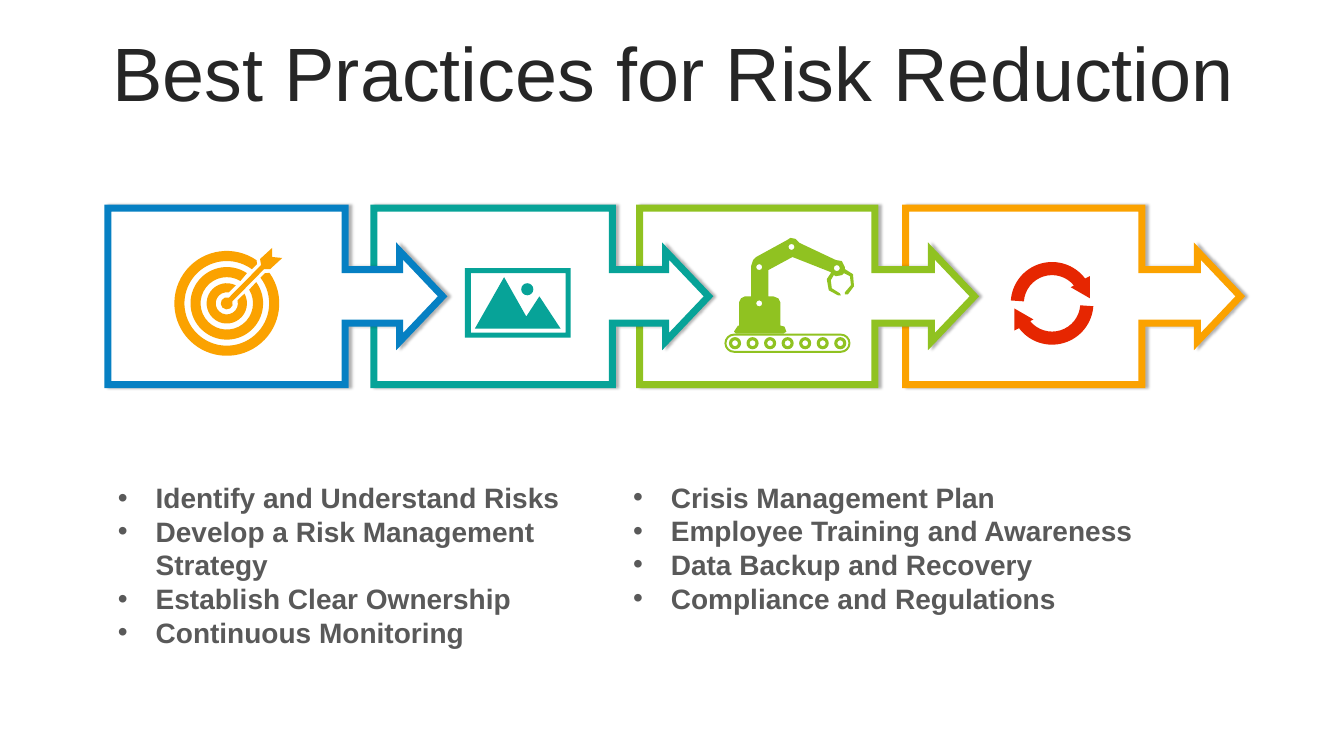
from dataclasses import dataclass
from math import ceil, cos, radians, sin, tan

from lxml.etree import SubElement
from pptx import Presentation
from pptx.dml.color import RGBColor
from pptx.enum.shapes import MSO_SHAPE
from pptx.enum.text import MSO_ANCHOR, MSO_AUTO_SIZE, PP_ALIGN
from pptx.oxml.ns import qn
from pptx.util import Inches, Pt


@dataclass(frozen=True)
class Theme:
    font: str = "Arial"
    title: str = "262626"
    body: str = "595959"
    white: str = "FFFFFF"
    blue: str = "0680C3"
    teal: str = "07A398"
    green: str = "90C221"
    orange: str = "FBA200"
    red: str = "E62601"
    title_size: int = 54
    body_size: int = 20


@dataclass(frozen=True)
class Box:
    x: int
    y: int
    w: int
    h: int
    cols: float
    rows: float

    def point(self, col, row):
        return (round(self.x + self.w * col / self.cols),
                round(self.y + self.h * row / self.rows))

    def area(self, col, row, cols, rows):
        return (*self.point(col, row),
                round(self.w * cols / self.cols), round(self.h * rows / self.rows))

    def sub(self, col, row, cols, rows):
        return Box(*self.area(col, row, cols, rows), cols, rows)


T = Theme()
STEPS = [(T.blue, 0.709), (T.teal, 0.713), (T.green, 0.703), (T.orange, 0.706)]
LEFT_POINTS = ["Identify and Understand Risks", "Develop a Risk Management Strategy",
               "Establish Clear Ownership", "Continuous Monitoring"]
RIGHT_POINTS = ["Crisis Management Plan", "Employee Training and Awareness",
                "Data Backup and Recovery", "Compliance and Regulations"]
ROBOT = [(66, 0), (71, 1), (75, 5), (111, 22), (117, 23), (120, 29), (120, 31),
         (128, 36), (129, 48), (123, 56), (120, 56), (120, 54), (126, 47),
         (125, 38), (119, 35), (117, 37), (111, 38), (109, 37), (106, 42),
         (107, 50), (115, 55), (116, 57), (113, 57), (104, 52), (102, 41),
         (106, 35), (106, 34), (68, 19), (44, 32), (44, 58), (49, 58),
         (54, 60), (56, 64), (56, 87), (60, 88), (62, 93), (59, 95),
         (12, 95), (10, 93), (14, 87), (15, 87), (15, 64), (17, 60),
         (21, 58), (27, 58), (27, 28), (29, 22), (32, 19), (63, 2)]


def paint(sp, color):
    sp.shadow.inherit = False
    sp.fill.solid()
    sp.fill.fore_color.rgb = RGBColor.from_string(color)
    sp.line.fill.background()


def arc(cx, cy, radius, start, end):
    count = ceil(abs(end - start) / 90)
    step = radians(end - start) / count
    pull = 4 / 3 * tan(step / 4)

    def on(angle, lean):
        return (cx + radius * (cos(angle) - lean * sin(angle)),
                cy + radius * (sin(angle) + lean * cos(angle)))

    angles = [radians(start) + step * i for i in range(count)]
    curves = [[on(a, pull), on(a + step, -pull), on(a + step, 0)] for a in angles]
    return [on(radians(start), 0)] + curves


def circle(cx, cy, radius):
    return arc(cx, cy, radius, 0, 360)


def rectangle(left, top, right, bottom):
    return [(left, top), (right, top), (right, bottom), (left, bottom)]


def stadium(left, right, cy, radius):
    return arc(right, cy, radius, -90, 90) + arc(left, cy, radius, 90, 270)


def icon_shape(shapes, box, contours, color):
    builder = shapes.build_freeform(*box.point(*contours[0][0]), scale=1.0)
    curve_flags = []
    for i, (first, *segments) in enumerate(contours):
        if i:
            builder.move_to(*box.point(*first))
        steps = [seg if isinstance(seg, list) else [seg] for seg in segments]
        curve_flags += [len(step) == 3 for step in steps]
        builder.add_line_segments([box.point(*pt) for step in steps for pt in step], close=True)
    sp = builder.convert_to_shape()
    paint(sp, color)
    lines = sp._element.iter(qn("a:lnTo"))
    for line, curved in zip(curve_nodes(list(lines), curve_flags), curve_flags):
        if curved:
            bend(line)


def curve_nodes(lines, curve_flags):
    nodes = iter(lines)
    return [[next(nodes) for _ in range(3 if curved else 1)] for curved in curve_flags]


def bend(nodes):
    parent = nodes[0].getparent()
    curve = SubElement(parent, qn("a:cubicBezTo"))
    parent.replace(nodes[0], curve)
    curve.append(nodes[0][0])
    for node in nodes[1:]:
        curve.append(node[0])
        parent.remove(node)


def style(p, size, color, bold=False):
    values = {"name": T.font, "size": Pt(size), "bold": bold}
    for r in p.runs:
        for name, value in values.items():
            setattr(r.font, name, value)
        r.font.color.rgb = RGBColor.from_string(color)


def place_title(s, box, text):
    sp = s.shapes.title
    for name, value in zip(("left", "top", "width", "height"), box.area(0, 0, box.cols, box.rows)):
        setattr(sp, name, value)
    tf = sp.text_frame
    tf.text = text
    tf.vertical_anchor = MSO_ANCHOR.MIDDLE
    p = tf.paragraphs[0]
    for name, value in {"alignment": PP_ALIGN.CENTER, "line_spacing": 0.9}.items():
        setattr(p, name, value)
    style(p, T.title_size, T.title)


def bullet_list(s, box, lines):
    tf = s.shapes.add_textbox(*box.area(0, 0, box.cols, box.rows)).text_frame
    for name, value in {"word_wrap": True, "auto_size": MSO_AUTO_SIZE.SHAPE_TO_FIT_TEXT}.items():
        setattr(tf, name, value)
    for i, line in enumerate(lines):
        p = tf.add_paragraph() if i else tf.paragraphs[0]
        p.text = line
        style(p, T.body_size, T.body, bold=True)
        props = p._p.get_or_add_pPr()
        props.set("marL", str(Pt(27)))
        props.set("indent", str(-Pt(27)))
        SubElement(props, qn("a:buFont"), typeface=T.font)
        SubElement(props, qn("a:buChar"), char="•")


def process_chain(s, box):
    shapes = s.shapes.add_group_shape().shapes
    for i, (color, body) in reversed(list(enumerate(STEPS))):
        sp = shapes.add_shape(MSO_SHAPE.RIGHT_ARROW_CALLOUT,
                              *box.area(263.7 * i, 0, 332, box.rows))
        for k, value in enumerate((0.303, 0.256, 0.243, body)):
            sp.adjustments[k] = value
        paint(sp, T.white)
        sp.line.color.rgb = RGBColor.from_string(color)
        sp.line.width = Pt(5)
        SubElement(sp.line._get_or_add_ln(), qn("a:miter"), lim="800000")
        effects = sp._element.spPr.find(qn("a:effectLst"))
        shadow = SubElement(effects, qn("a:outerShdw"), blurRad=str(Pt(2)),
                            dist=str(Pt(2)), dir="0", algn="l", rotWithShape="0")
        black = SubElement(shadow, qn("a:srgbClr"), val="000000")
        SubElement(black, qn("a:alpha"), val="30000")


def target_icon(s, box):
    def ring(outer, start, end, notch, inner, back, stop):
        return arc(51, 55, outer, start, end) + notch + arc(51, 55, inner, back, stop)

    icon_shape(s.shapes, box, [
        ring(20, -29, 296.6, [], 11, 280.3, -15.3),
        ring(36, -35.9, 303.7, [], 26, 301.3, -31.3),
        ring(52, -35.5, 304.6, [(81, 16)], 42, 306.3, -37.4) + [(89, 25)],
        [(96, 0), (96, 9), (106, 10), (94, 21), (88, 21)]
        + arc(51, 55, 6, -20, 290) + [(85, 17), (84, 11)],
    ], T.orange)


def landscape_icon(s, box):
    icon_shape(s.shapes, box, [
        circle(62, 21, 6),
        [(39, 9), (61, 48), (74, 28), (95, 60), (10, 60)],
        rectangle(6, 5, 100, 64),
        rectangle(0, 0, box.cols, box.rows),
    ], T.teal)


def robot_icon(s, box):
    shapes = s.shapes.add_group_shape().shapes
    joints = [circle(*pt, 3) for pt in ((35, 65), (112, 30), (35, 29), (67, 9))]
    icon_shape(shapes, box, joints + [ROBOT], T.green)
    wheels = [circle(11 + 17.4 * i, 104.5, radius) for i in range(7) for radius in (3, 6)]
    belt = [stadium(10, 116, 104.5, radius) for radius in (7.5, 9.5)]
    icon_shape(shapes, box, wheels + belt, T.green)


def cycle_icon(s, box):
    upper = (arc(40.5, 41, 41, 184, 323) + [(78, 14), (78, 36), (59, 25)]
             + arc(40.5, 41, 28, 321, 184))
    lower = (arc(40.5, 41, 41, 4, 143) + [(3, 68), (3, 46), (22, 57)]
             + arc(40.5, 41, 28, 141, 4))
    icon_shape(s.shapes, box, [lower, upper], T.red)


def practices_slide(prs):
    s = prs.slides.add_slide(prs.slide_layouts[5])
    page = Box(0, 0, prs.slide_width, prs.slide_height, 1333, 750)
    place_title(s, page.sub(35, 37, 1266, 79), "Best Practices for Risk Reduction")
    bullet_list(s, page.sub(107, 472, 528, 178), LEFT_POINTS)
    process_chain(s, page.sub(107, 206.5, 1123, 175))
    robot_icon(s, page.sub(718, 236, 129, 115))
    bullet_list(s, page.sub(618, 471.5, 528, 145), RIGHT_POINTS)
    cycle_icon(s, page.sub(1003, 260, 81, 82))
    landscape_icon(s, page.sub(461, 266, 105, 69))
    target_icon(s, page.sub(174, 246, 106, 107))


def main():
    prs = Presentation()
    prs.slide_width, prs.slide_height = Inches(13.33), Inches(7.5)
    practices_slide(prs)
    prs.save("out.pptx")


if __name__ == "__main__":
    main()
